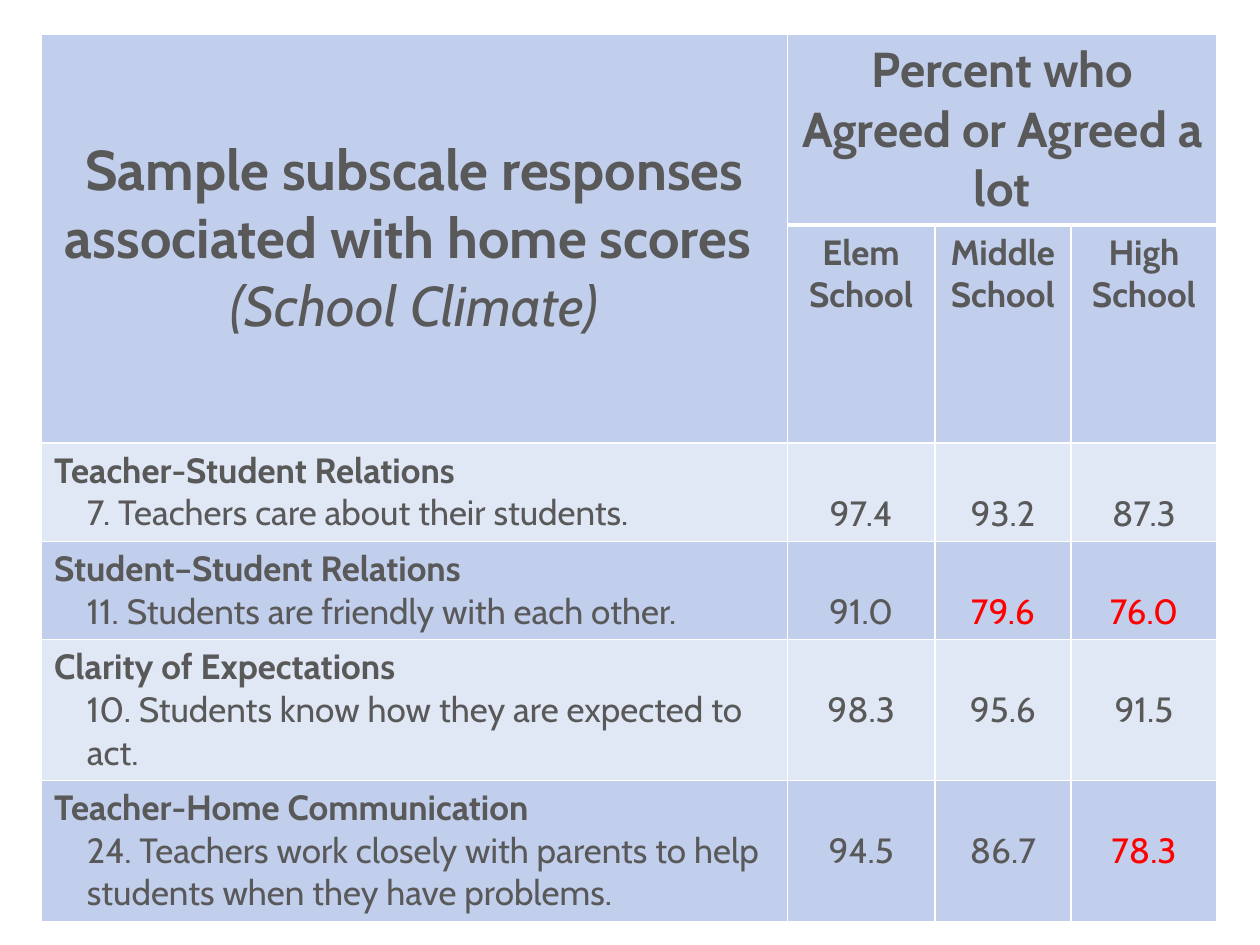
from pptx import Presentation
from pptx.dml.color import RGBColor
from pptx.enum.text import MSO_ANCHOR, PP_ALIGN
from pptx.oxml import parse_xml
from pptx.oxml.ns import nsdecls
from pptx.util import Inches, Pt

MIDDLE = MSO_ANCHOR.MIDDLE
LEFT, CENTER = PP_ALIGN.LEFT, PP_ALIGN.CENTER


class Theme:
    font = "Cabin"
    text, alert = "595959", "FF0000"
    dark, light, line = "C1CEEC", "E0E7F5", "FFFFFF"
    title, head, body = 32, 28, 20
    thin, thick = 1, 3


WIDTHS = [5.92, 1.17, 1.08, 1.16]
HEIGHTS = [1.51, 1.73, 0.78, 0.78, 1.11, 1.12]
LOW = 80  # percentages below this are shown in the alert colour
ITEMS = [
    ("Teacher-Student Relations", "7. Teachers care about their students.",
     [97.4, 93.2, 87.3]),
    ("Student–Student Relations", "11. Students are friendly with each other.",
     [91.0, 79.6, 76.0]),
    ("Clarity of Expectations", "10. Students know how they are expected to act.",
     [98.3, 95.6, 91.5]),
    ("Teacher-Home Communication",
     "24. Teachers work closely with parents to help students when they have problems.",
     [94.5, 86.7, 78.3]),
]


def write(para, text, size=Theme.body, bold=False, italic=False,
          color=Theme.text, align=CENTER, indent=0):
    para.alignment = align
    if indent:
        props = para._p.get_or_add_pPr()
        props.set("marL", str(Inches(indent)))
        props.set("indent", "0")
    run = para.add_run()
    run.text = text
    font = run.font
    font.name, font.size = Theme.font, Pt(size)
    font.bold, font.italic = bold, italic
    font.color.rgb = RGBColor.from_string(color)


def paint(cell, fill, top=Theme.thin, base=Theme.thin):
    """Set the borders of a cell, then its fill."""
    props = cell._tc.get_or_add_tcPr()
    widths = {"lnL": Theme.thin, "lnR": Theme.thin, "lnT": top, "lnB": base}
    for side, width in widths.items():
        props.append(parse_xml(
            f'<a:{side} {nsdecls("a")} w="{Pt(width)}"><a:solidFill>'
            f'<a:srgbClr val="{Theme.line}"/></a:solidFill></a:{side}>'))
    cell.fill.solid()
    cell.fill.fore_color.rgb = RGBColor.from_string(fill)


deck = Presentation()
deck.slide_width, deck.slide_height = Inches(10), Inches(7.5)
slide = deck.slides.add_slide(deck.slide_layouts[6])
table = slide.shapes.add_table(
    len(HEIGHTS), len(WIDTHS), Inches(0.33), Inches(0.27),
    Inches(sum(WIDTHS)), Inches(sum(HEIGHTS))).table
for col, width in zip(table.columns, WIDTHS):
    col.width = Inches(width)
for row, height in zip(table.rows, HEIGHTS):
    row.height = Inches(height)

# Fills and borders, with a thick rule between the two header rows
for r in range(len(HEIGHTS)):
    fill = Theme.light if r in (2, 4) else Theme.dark
    for c in range(len(WIDTHS)):
        paint(table.cell(r, c), fill,
              top=Theme.thick if r == 1 and c else Theme.thin,
              base=Theme.thick if r == 0 and c else Theme.thin)

# Header
title = table.cell(0, 0)
title.merge(table.cell(1, 0))
title.vertical_anchor = MIDDLE
para = title.text_frame.paragraphs[0]
write(para, "Sample subscale responses associated with home scores ",
      size=Theme.title, bold=True)
para.add_line_break()
write(para, "(School Climate)", size=Theme.title, italic=True)

head = table.cell(0, 1)
head.merge(table.cell(0, 3))
write(head.text_frame.paragraphs[0], "Percent who Agreed or Agreed a lot",
      size=Theme.head, bold=True)

for c, name in enumerate(["Elem School", "Middle School", "High School"], 1):
    write(table.cell(1, c).text_frame.paragraphs[0], name, bold=True)

# Survey items
for r, (scale, item, scores) in enumerate(ITEMS, 2):
    frame = table.cell(r, 0).text_frame
    write(frame.paragraphs[0], scale, bold=True, align=LEFT)
    write(frame.add_paragraph(), item, align=LEFT, indent=0.26)
    for c, score in enumerate(scores, 1):
        cell = table.cell(r, c)
        cell.margin_top = Inches(0.39)  # level with the item's first line
        write(cell.text_frame.paragraphs[0], f"{score:.1f}",
              color=Theme.alert if score < LOW else Theme.text)

deck.save("out.pptx")
